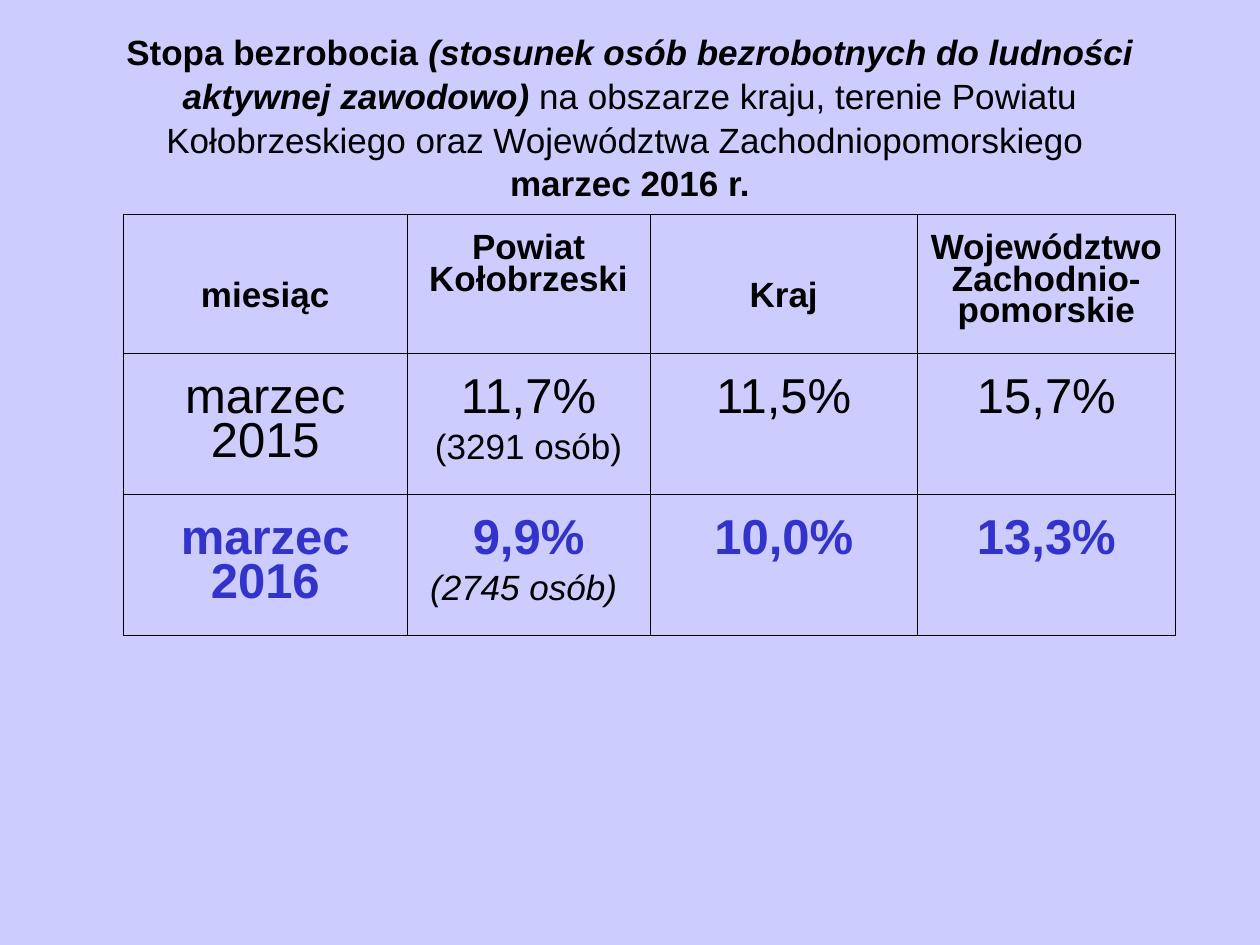
from dataclasses import dataclass

import pptx
import pptx.dml.color
import pptx.enum.text
import pptx.oxml.ns
import pptx.util
from lxml import etree
from pptx.util import Inches

COLORS = {"page": "CCCCFF", "text": "000000", "accent": "3333CC"}
FONT = "Arial"
CENTER = pptx.enum.text.PP_ALIGN.CENTER
INNER_LINE, OUTER_LINE = 0.11, 0.23


@dataclass(frozen=True)
class Span:
    text: str
    size: int = 20
    bold: bool = False
    italic: bool = False
    color: str = "text"


@dataclass(frozen=True)
class Entry:
    spans: tuple[Span, ...]  # one paragraph for each span
    top: float = 0.2
    space_before: int = 7


def heading(text: str, top: float = 0.16) -> Entry:
    return Entry((Span(text, bold=True),), top, 5)


def earlier(text: str, *details: Span) -> Entry:
    return Entry((Span(text, 28), *details))


def latest(text: str, *details: Span) -> Entry:
    return Entry((Span(text, 28, bold=True, color="accent"), *details))


TITLE = (
    Span("Stopa bezrobocia ", bold=True),
    Span("(stosunek osób bezrobotnych do ludności aktywnej zawodowo)", bold=True, italic=True),
    Span(" na obszarze kraju, terenie Powiatu Kołobrzeskiego oraz Województwa Zachodniopomorskiego "),
)
TITLE_DATE = Span("marzec 2016 r.", bold=True)

COLUMN_WIDTHS = (2.25, 1.93, 2.12, 2.05)
ROW_HEIGHTS = (1.1, 1.12, 1.12)
LOW_HEADING = 0.54  # top margin of the one-line headings
ENTRIES = (
    (heading("miesiąc", LOW_HEADING), heading("Powiat Kołobrzeski"),
     heading("Kraj", LOW_HEADING), heading("Województwo Zachodnio-pomorskie")),
    (earlier("marzec 2015"), earlier("11,7%", Span("(3291 osób)")),
     earlier("11,5%"), earlier("15,7%")),
    (latest("marzec 2016"), latest("9,9%", Span("(2745 osób) ", italic=True)),
     latest("10,0%"), latest("13,3%")),
)


def set_format(target: object, values: dict) -> None:
    for name, value in values.items():
        setattr(target, name, value)


def add_span(para: object, span: Span) -> None:
    run = para.add_run()
    run.text = span.text
    set_format(run.font, {"name": FONT, "size": pptx.util.Pt(span.size),
                          "bold": span.bold, "italic": span.italic})
    run.font.color.rgb = pptx.dml.color.RGBColor.from_string(COLORS[span.color])


def add_border(cell: object, side: str, width: float) -> None:
    qn = pptx.oxml.ns.qn
    line = etree.SubElement(cell._tc.get_or_add_tcPr(), qn(f"a:ln{side}"),
                            w=str(pptx.util.Pt(width)))
    fill = etree.SubElement(line, qn("a:solidFill"))
    etree.SubElement(fill, qn("a:srgbClr"), val=COLORS["text"])


def fill_cell(cell: object, entry: Entry) -> None:
    set_format(cell, {"margin_left": Inches(0.1), "margin_right": Inches(0.1),
                      "margin_top": Inches(entry.top), "margin_bottom": Inches(0.05)})
    for index, span in enumerate(entry.spans):
        frame = cell.text_frame
        para = frame.add_paragraph() if index else frame.paragraphs[0]
        set_format(para, {"alignment": CENTER, "line_spacing": 0.81,
                          "space_before": pptx.util.Pt(entry.space_before)})
        add_span(para, span)


def add_title(page: object) -> None:
    box = page.shapes.title
    set_format(box, {"left": Inches(0.5), "top": Inches(0.3),
                     "width": Inches(9), "height": Inches(1.25)})
    set_format(box.text_frame, {"word_wrap": True,
                                "auto_size": pptx.enum.text.MSO_AUTO_SIZE.NONE,
                                "vertical_anchor": pptx.enum.text.MSO_ANCHOR.MIDDLE})
    para = box.text_frame.paragraphs[0]
    set_format(para, {"alignment": CENTER, "line_spacing": 1.04})
    for span in TITLE:
        add_span(para, span)
    para.add_line_break()
    add_span(para, TITLE_DATE)


def add_rates(page: object) -> None:
    last_row, last_column = len(ROW_HEIGHTS) - 1, len(COLUMN_WIDTHS) - 1
    table = page.shapes.add_table(
        len(ROW_HEIGHTS), len(COLUMN_WIDTHS), Inches(0.98), Inches(1.7),
        Inches(sum(COLUMN_WIDTHS)), Inches(sum(ROW_HEIGHTS))).table
    set_format(table, {"first_row": False, "horz_banding": False})
    for column, width in zip(table.columns, COLUMN_WIDTHS):
        column.width = Inches(width)
    for row, height in zip(table.rows, ROW_HEIGHTS):
        row.height = Inches(height)
    for r, entries in enumerate(ENTRIES):
        for c, entry in enumerate(entries):
            cell = table.cell(r, c)
            outer = {"L": c == 0, "R": c == last_column, "T": r == 0, "B": r == last_row}
            for side, is_outer in outer.items():
                add_border(cell, side, OUTER_LINE if is_outer else INNER_LINE)
            cell.fill.background()
            fill_cell(cell, entry)


def main() -> None:
    deck = pptx.Presentation()
    set_format(deck, {"slide_width": Inches(10), "slide_height": Inches(7.5)})
    page = deck.slides.add_slide(deck.slide_layouts[5])

    # Background
    page.background.fill.solid()
    page.background.fill.fore_color.rgb = pptx.dml.color.RGBColor.from_string(COLORS["page"])

    # Title and unemployment rates
    add_title(page)
    add_rates(page)
    deck.save("out.pptx")


if __name__ == "__main__":
    main()
